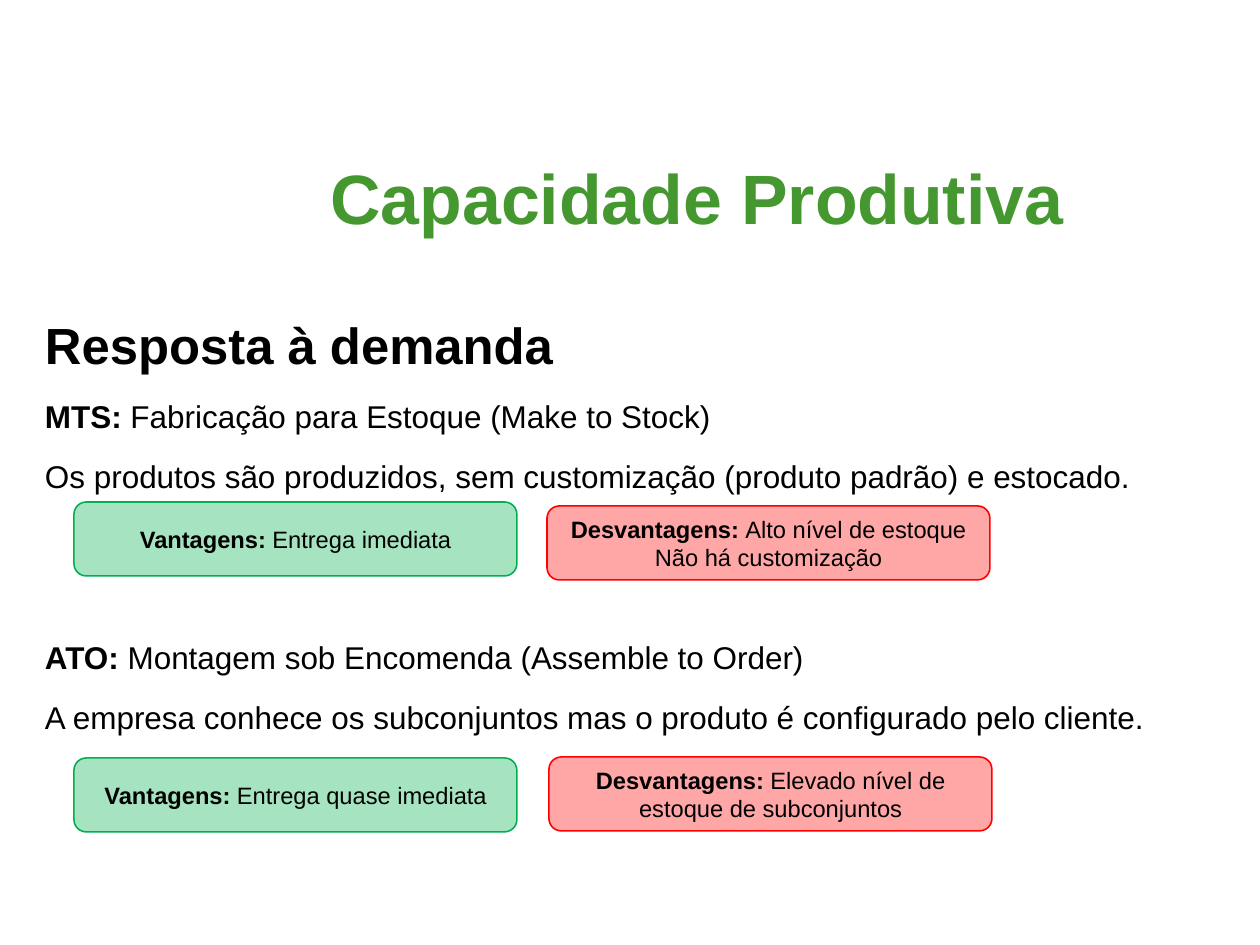
from dataclasses import dataclass

from lxml.etree import SubElement as Sub
from pptx import Presentation
from pptx.dml.color import RGBColor as Rgb
from pptx.enum.shapes import MSO_SHAPE as Kind
from pptx.enum.text import MSO_ANCHOR as Anchor, MSO_AUTO_SIZE as Auto, PP_ALIGN as Align
from pptx.oxml.ns import qn
from pptx.util import Pt


@dataclass(frozen=True)
class Theme:
    """Colours, type sizes and spacing of the slide."""
    face: str = "Arial"
    ink: str = "000000"
    title: str = "45982F"
    pro: str = "00B050"
    con: str = "FF0000"
    alpha: int = 35
    big: float = 44
    head: float = 32
    text: float = 19.8
    note: float = 14.9
    after: float = 14.1
    gap: float = 76


LOOK = Theme()
FLUSH = dict.fromkeys(
    ("margin_left", "margin_top", "margin_right", "margin_bottom"), 0)


def px(n):
    """Turn pixels into EMU."""
    return n * 8000


def apply(obj, form):
    """Set each attribute named in a dict."""
    for name, val in form.items():
        setattr(obj, name, val)


def place(shape, box):
    """Move and size a shape in pixels."""
    apply(shape, dict(zip(("left", "top", "width", "height"), map(px, box))))


def write(para, runs, size, tint=LOOK.ink, **form):
    """Fill a paragraph with (text, bold) runs."""
    apply(para, form)
    for text, bold in runs:
        run = para.add_run()
        run.text = text
        apply(run.font, {"name": LOOK.face, "size": Pt(size), "bold": bold})
        run.font.color.rgb = Rgb.from_string(tint)


def add_title(slide, text, box):
    """Format the title placeholder."""
    shape = slide.shapes.title
    place(shape, box)
    frame = shape.text_frame
    apply(frame, {**FLUSH, "word_wrap": True, "auto_size": Auto.NONE,
                  "vertical_anchor": Anchor.MIDDLE})
    write(frame.paragraphs[0], [(text, True)], LOOK.big, LOOK.title,
          alignment=Align.CENTER)


def add_body(slide, head, parts, box):
    """Add the heading and its term and text pairs."""
    frame = slide.shapes.add_textbox(*map(px, box)).text_frame
    apply(frame, {**FLUSH, "word_wrap": True})
    after = Pt(LOOK.after)
    write(frame.paragraphs[0], [(head, True)], LOOK.head, space_after=after)
    form = {"alignment": Align.JUSTIFY, "space_after": after}
    for i, (term, name, text) in enumerate(parts):
        write(frame.add_paragraph(), [(term, True), (name, False)], LOOK.text,
              space_before=Pt(LOOK.gap * i), **form)
        write(frame.add_paragraph(), [(text, False)], LOOK.text, **form)


def add_card(slide, spot, tint, label, lines):
    """Add a tinted rounded box with a bold label."""
    card = slide.shapes.add_shape(Kind.ROUNDED_RECTANGLE, *map(px, (*spot, 443, 74)))
    card.shadow.inherit = False
    card.fill.solid()
    card.fill.fore_color.rgb = card.line.color.rgb = Rgb.from_string(tint)
    card.line.width = Pt(1)
    clr = card.fill._xPr.find(qn("a:solidFill"))[0]
    Sub(clr, qn("a:alpha"), val=str(LOOK.alpha * 1000))
    frame = card.text_frame
    apply(frame, {"word_wrap": True, "vertical_anchor": Anchor.MIDDLE})
    first, *rest = lines
    write(frame.paragraphs[0], [(label, True), (first, False)], LOOK.note,
          alignment=Align.CENTER)
    for line in rest:
        write(frame.add_paragraph(), [(line, False)], LOOK.note,
              alignment=Align.CENTER)


def main():
    """Build and save the slide."""
    deck = Presentation()
    apply(deck, {"slide_width": px(1260), "slide_height": px(945)})
    slide = deck.slides.add_slide(deck.slide_layouts[5])
    add_title(slide, "Capacidade Produtiva", (198, 118, 999, 158))
    add_body(slide, "Resposta à demanda", [
        ("MTS:", " Fabricação para Estoque (Make to Stock)",
         "Os produtos são produzidos, sem customização (produto padrão) e estocado."),
        ("ATO: ", "Montagem sob Encomenda (Assemble to Order)",
         "A empresa conhece os subconjuntos mas o produto é configurado pelo cliente."),
    ], (45, 314, 1152, 425))
    pro, con = (LOOK.pro, "Vantagens: "), (LOOK.con, "Desvantagens: ")
    for spot, kind, lines in (
        ((74, 502), pro, ["Entrega imediata"]),
        ((547, 506), con, ["Alto nível de estoque", "Não há customização"]),
        ((74, 758), pro, ["Entrega quase imediata"]),
        ((549, 757), con, ["Elevado nível de estoque de subconjuntos"]),
    ):
        add_card(slide, spot, *kind, lines)
    deck.save("out.pptx")


if __name__ == "__main__":
    main()
